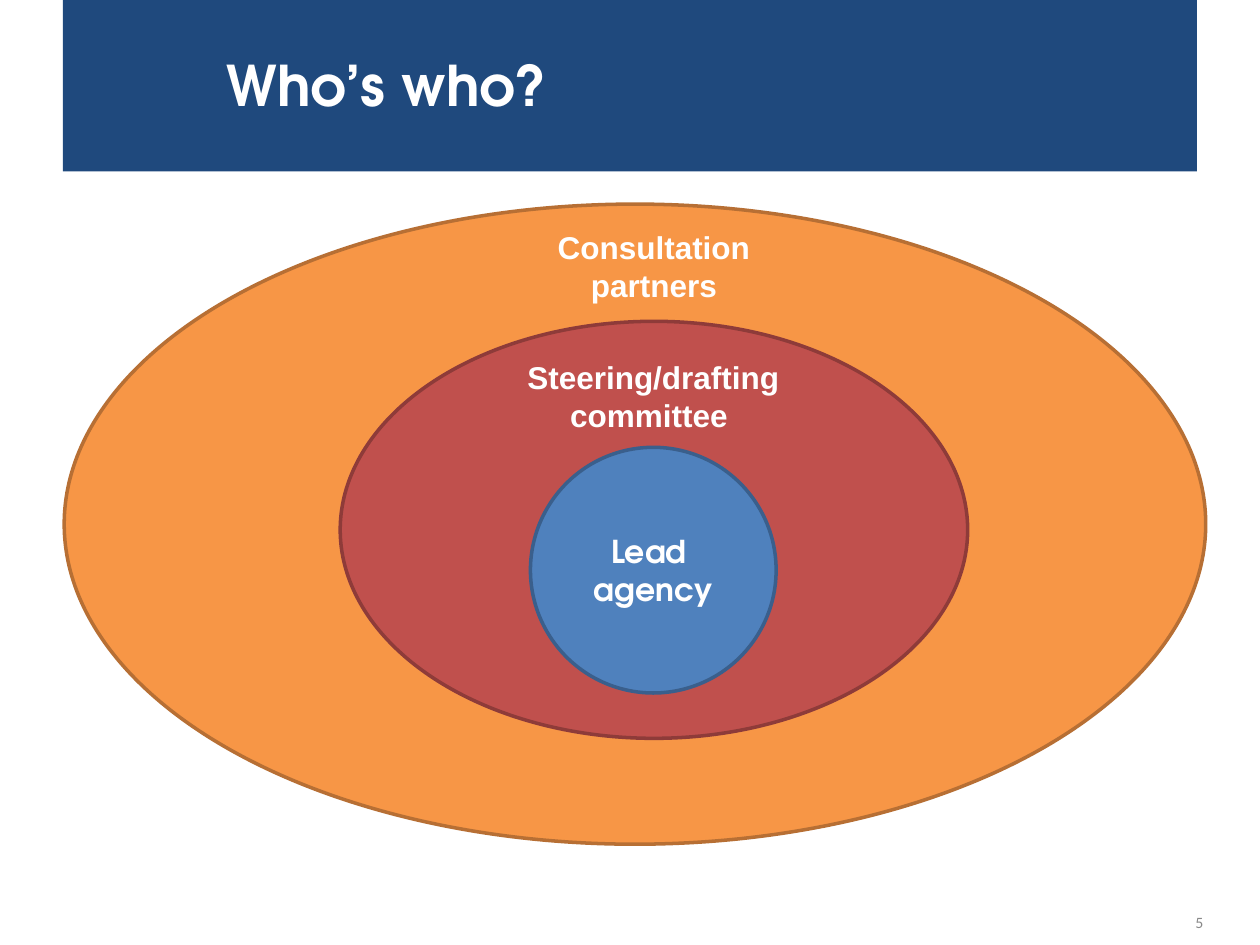
from dataclasses import dataclass

from pptx import Presentation
from pptx import util as u
from pptx.dml.color import RGBColor
from pptx.enum import shapes, text

COLORS = {
    "navy": "1F497D", "white": "FFFFFF", "gray": "898989",
    "orange": "F79646", "orange_edge": "B76F34",
    "red": "C0504D", "red_edge": "8E3B39",
    "blue": "4F81BD", "blue_edge": "3A5F8C",
}
HEADING_FONT = "TeX Gyre Adventor"
LABEL_FONT = "Arial"


@dataclass
class Box:
    left: float
    top: float
    width: float
    height: float

    def lengths(self) -> list:
        return [u.Inches(v) for v in (self.left, self.top, self.width, self.height)]


@dataclass
class Ring:
    box: Box
    color: str


@dataclass
class Label:
    box: Box
    lines: list[str]


def rgb(name: str) -> RGBColor:
    return RGBColor.from_string(COLORS[name])


def write(frame, lines: list[str], font: str, size: float, color: str = "white",
          bold: bool = True, align=text.PP_ALIGN.CENTER,
          anchor=text.MSO_ANCHOR.MIDDLE,
          margins: tuple = (0.1, 0.05, 0.1, 0.05)) -> None:
    sides = ("margin_left", "margin_top", "margin_right", "margin_bottom")
    frame_format = {"word_wrap": True, "vertical_anchor": anchor}
    frame_format.update(zip(sides, map(u.Inches, margins)))
    for name, value in frame_format.items():
        setattr(frame, name, value)
    for index, line in enumerate(lines):
        paragraph = frame.add_paragraph() if index else frame.paragraphs[0]
        paragraph.alignment = align
        run = paragraph.add_run()
        run.text = line
        for name, value in {"name": font, "size": u.Pt(size), "bold": bold}.items():
            setattr(run.font, name, value)
        run.font.color.rgb = rgb(color)


def add_filled(slide, kind, box: Box, fill: str, edge: str | None = None):
    shape = slide.shapes.add_shape(kind, *box.lengths())
    shape.shadow.inherit = False
    shape.fill.solid()
    shape.fill.fore_color.rgb = rgb(fill)
    if edge:
        shape.line.color.rgb = rgb(edge)
        shape.line.width = u.Pt(2)
    else:
        shape.line.fill.background()
    return shape


def add_ring(slide, ring: Ring):
    return add_filled(slide, shapes.MSO_SHAPE.OVAL, ring.box, ring.color,
                      f"{ring.color}_edge")


def add_label(slide, label: Label) -> None:
    frame = slide.shapes.add_textbox(*label.box.lengths()).text_frame
    write(frame, label.lines, LABEL_FONT, 18, anchor=text.MSO_ANCHOR.TOP)
    frame.auto_size = text.MSO_AUTO_SIZE.SHAPE_TO_FIT_TEXT


OUTER_RINGS = [
    Ring(Box(0.51, 1.62, 9.06, 5.08), "orange"),
    Ring(Box(2.7, 2.55, 4.98, 3.31), "red"),
]
CORE = Ring(Box(4.21, 3.55, 1.95, 1.95), "blue")
LABELS = [
    Label(Box(4.29, 1.76, 1.8, 0.71), ["Consultation", "partners"]),
    Label(Box(4.06, 2.79, 2.25, 0.71), ["Steering/drafting committee "]),
]


def main() -> None:
    deck = Presentation()
    deck.slide_width, deck.slide_height = u.Inches(10), u.Inches(7.5)
    slide = deck.slides.add_slide(deck.slide_layouts[6])

    # Title band
    band = add_filled(slide, shapes.MSO_SHAPE.RECTANGLE,
                      Box(0.5, -0.03, 9, 1.39), "navy")
    write(band.text_frame, ["Who’s who?"], HEADING_FONT, 32,
          align=text.PP_ALIGN.LEFT, margins=(1.3, 0.05, 0.3, 0.05))

    # Nested circles of involvement
    for ring in OUTER_RINGS:
        add_ring(slide, ring)
    lead_agency = add_ring(slide, CORE)
    write(lead_agency.text_frame, ["Lead ", "agency"], HEADING_FONT, 18)
    for label in LABELS:
        add_label(slide, label)

    # Slide number
    number = slide.shapes.add_textbox(*Box(7.29, 7.12, 2.33, 0.4).lengths())
    write(number.text_frame, ["5"], "Calibri", 9, "gray", bold=False,
          align=text.PP_ALIGN.RIGHT, margins=(0.07, 0.04, 0.07, 0.04))

    deck.save("out.pptx")


if __name__ == "__main__":
    main()
